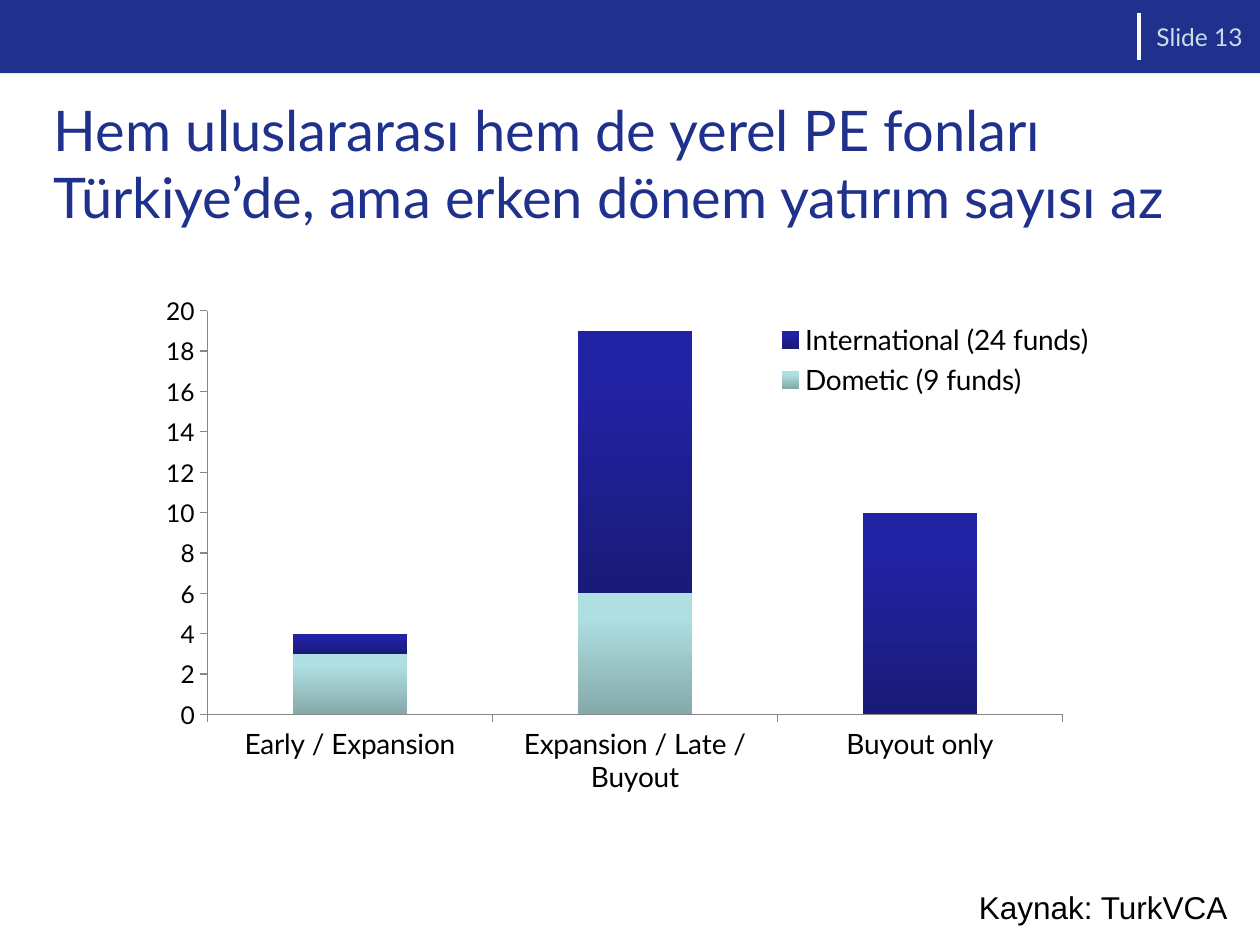
import pptx
import pptx.chart.data
import pptx.dml.color
import pptx.enum.chart
import pptx.enum.shapes
import pptx.enum.text
import pptx.oxml
import pptx.oxml.ns
import pptx.util

Inches = pptx.util.Inches
Pt = pptx.util.Pt
COLORS = {
    "navy": "1F318D", "white": "FFFFFF", "pale": "CBDDEB", "black": "000000",
    "axis": "868686", "teal_top": "AEDFE1", "teal_bottom": "86A9AA",
    "blue_top": "2222A5", "blue_bottom": "1A1A78",
}


def rgb(name):
    return pptx.dml.color.RGBColor.from_string(COLORS[name])


def place_in_chart(parent, target, x, y, width, height):
    """Give a plot area or legend a fixed place, in fractions of the chart."""
    values = {"xMode": "edge", "yMode": "edge", "x": x, "y": y, "w": width, "h": height}
    if target:
        values = {"layoutTarget": target, **values}
    children = "".join(f'<c:{tag} val="{value}"/>' for tag, value in values.items())
    layout = pptx.oxml.parse_xml(
        f'<c:layout {pptx.oxml.ns.nsdecls("c")}>'
        f"<c:manualLayout>{children}</c:manualLayout></c:layout>")
    for old in parent.findall(pptx.oxml.ns.qn("c:layout")):
        parent.remove(old)
    position = parent.find(pptx.oxml.ns.qn("c:legendPos"))
    if position is None:
        parent.insert(0, layout)
    else:
        position.addnext(layout)


deck = pptx.Presentation()
deck.slide_width, deck.slide_height = Inches(10), Inches(7.5)
page = deck.slides.add_slide(deck.slide_layouts[6])

# Header band and its divider
band = page.shapes.add_shape(
    pptx.enum.shapes.MSO_SHAPE.RECTANGLE, 0, 0, Inches(10), Inches(0.58))
band.shadow.inherit = False
band.fill.solid()
band.fill.fore_color.rgb = rgb("navy")
band.line.fill.background()

divider = page.shapes.add_connector(
    pptx.enum.shapes.MSO_CONNECTOR.STRAIGHT,
    Inches(9.04), Inches(0.1), Inches(9.04), Inches(0.48))
divider.line.color.rgb = rgb("white")
divider.line.width = Pt(2.5)
divider._element.spPr.append(
    pptx.oxml.parse_xml(f'<a:effectLst {pptx.oxml.ns.nsdecls("a")}/>'))

# Stacked columns of funds by stage
data = pptx.chart.data.CategoryChartData()
data.categories = ["Early / Expansion", "Expansion / Late / Buyout", "Buyout only"]
data.add_series("Dometic (9 funds)", (3, 6, 0))
data.add_series("International (24 funds)", (1, 13, 10))
chart = page.shapes.add_chart(
    pptx.enum.chart.XL_CHART_TYPE.COLUMN_STACKED,
    Inches(1), Inches(2.25), Inches(8.08), Inches(4.33), data).chart
chart.has_title = False
chart.font.name = "Lato"
chart.font.size = Pt(10)
chart.font.color.rgb = rgb("black")

plot = chart.plots[0]
plot.vary_by_categories = False
plot.overlap = 100
plot.gap_width = 150
for series, hue in zip(plot.series, ("teal", "blue")):
    fill = series.format.fill
    fill.gradient()
    fill.gradient_angle = 270
    for stop, position, end in zip(fill.gradient_stops, (0.2, 1), ("top", "bottom")):
        stop.position = position
        stop.color.rgb = rgb(f"{hue}_{end}")

for axis, size in ((chart.category_axis, 16), (chart.value_axis, 14)):
    axis.has_major_gridlines = False
    axis.major_tick_mark = pptx.enum.chart.XL_TICK_MARK.OUTSIDE
    axis.minor_tick_mark = pptx.enum.chart.XL_TICK_MARK.NONE
    axis.format.line.color.rgb = rgb("axis")
    axis.tick_labels.font.size = Pt(size)
for name, value in {"minimum_scale": 0, "maximum_scale": 20, "major_unit": 2}.items():
    setattr(chart.value_axis, name, value)

chart.has_legend = True
legend = chart.legend
legend.position = pptx.enum.chart.XL_LEGEND_POSITION.RIGHT
legend.include_in_layout = True
legend.font.size = Pt(16)
place_in_chart(chart._chartSpace.chart.plotArea, "inner", 0.08, 0.05, 0.84, 0.74)
place_in_chart(legend._element, None, 0.63, 0.06, 0.33, 0.16)

# Title, page number and source
middle = pptx.enum.text.MSO_ANCHOR.MIDDLE
top = pptx.enum.text.MSO_ANCHOR.TOP
texts = [
    ("Hem uluslararası hem de yerel PE fonları Türkiye’de, ama erken dönem yatırım sayısı az",
     (0.33, 0.83, 9.67, 0.92), middle, True, "navy", {"name": "Lato", "size": Pt(32)}),
    ("Slide 13", (9.08, 0, 0.92, 0.59), middle, True, "pale",
     {"name": "Lato", "size": Pt(14)}),
    ("Kaynak: TurkVCA", (7.67, 7, 2.19, 0.4), top, False, "black",
     {"name": "Arial", "size": Pt(18)}),
]
for text, place, anchor, wrap, color, formats in texts:
    box = page.shapes.add_textbox(*map(Inches, place))
    box.text_frame.word_wrap = wrap
    box.text_frame.vertical_anchor = anchor
    span = box.text_frame.paragraphs[0].add_run()
    span.text = text
    span.font.color.rgb = rgb(color)
    for name, value in formats.items():
        setattr(span.font, name, value)

deck.save("out.pptx")
